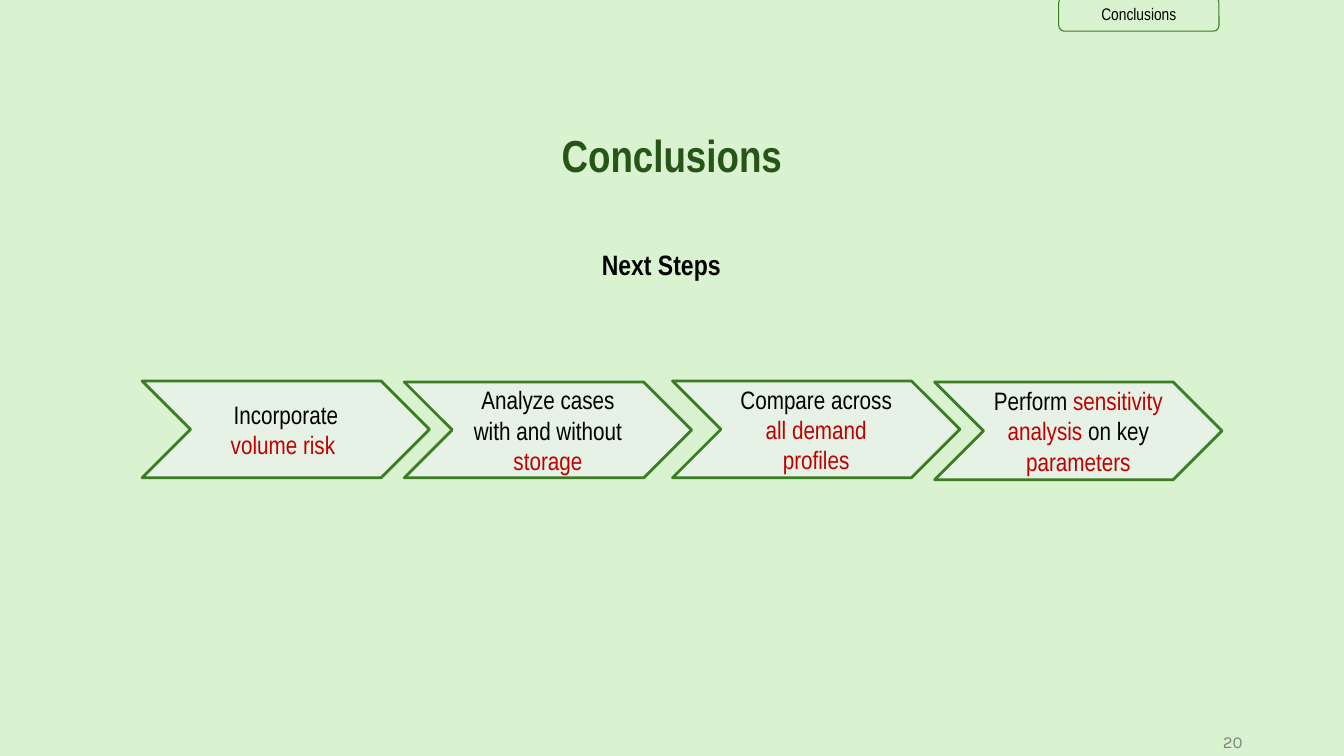
from dataclasses import dataclass

from pptx import Presentation
from pptx.dml.color import RGBColor
from pptx.enum.shapes import MSO_SHAPE
from pptx.enum.text import MSO_ANCHOR, PP_ALIGN
from pptx.util import Inches, Pt


@dataclass(frozen=True)
class Theme:
    background: str = "D9F2D0"
    step_fill: str = "E5F2E5"
    outline: str = "3B7D23"
    title: str = "275417"
    text: str = "000000"
    accent: str = "C00000"
    muted: str = "808080"
    font: str = "Arial Narrow"
    number_font: str = "Karla"
    title_size: int = 32
    heading_size: int = 20
    step_size: int = 18
    small_size: int = 12


theme = Theme()


def write(box, pieces, size, align=PP_ALIGN.CENTER, bold=False, font=theme.font):
    box.text_frame.word_wrap = True
    para = box.text_frame.paragraphs[0]
    para.alignment = align
    for text, color in pieces:
        span = para.add_run()
        span.text = text
        span.font.name = font
        span.font.size = Pt(size)
        span.font.bold = bold
        span.font.color.rgb = RGBColor.from_string(color)


def add_outlined(page, kind, place, line_width):
    shape = page.shapes.add_shape(kind, *map(Inches, place))
    shape.shadow.inherit = False
    shape.line.color.rgb = RGBColor.from_string(theme.outline)
    shape.line.width = Pt(line_width)
    shape.text_frame.vertical_anchor = MSO_ANCHOR.MIDDLE
    return shape


deck = Presentation()
deck.slide_width = Inches(13.33)
deck.slide_height = Inches(7.5)
page = deck.slides.add_slide(deck.slide_layouts[6])
page.background.fill.solid()
page.background.fill.fore_color.rgb = RGBColor.from_string(theme.background)

title = page.shapes.add_textbox(Inches(0), Inches(1.22), Inches(13.33), Inches(0.64))
write(title, [("Conclusions", theme.title)], theme.title_size, bold=True)

heading = page.shapes.add_textbox(Inches(5.87), Inches(2.41), Inches(1.58), Inches(0.44))
write(heading, [("Next Steps", theme.text)], theme.heading_size, PP_ALIGN.LEFT, bold=True)

steps = [
    (1.41, 3.78, 0.96, [("Incorporate ", theme.text), ("volume risk ", theme.accent)]),
    (4.01, 3.79, 0.95, [("Analyze cases with and without ", theme.text),
                        ("storage", theme.accent)]),
    (6.67, 3.78, 0.96, [("Compare across ", theme.text),
                        ("all demand profiles", theme.accent)]),
    (9.27, 3.79, 0.97, [("Perform ", theme.text), ("sensitivity analysis ", theme.accent),
                        ("on key ", theme.text), ("parameters", theme.accent)]),
]
for left, top, height, pieces in steps:
    step = add_outlined(page, MSO_SHAPE.CHEVRON, (left, top, 2.85, height), 2)
    step.fill.solid()
    step.fill.fore_color.rgb = RGBColor.from_string(theme.step_fill)
    write(step, pieces, theme.step_size)

tab = add_outlined(page, MSO_SHAPE.ROUNDED_RECTANGLE, (10.5, -0.03, 1.59, 0.34), 0.75)
tab.fill.background()
write(tab, [("Conclusions", theme.text)], theme.small_size)

number = page.shapes.add_textbox(Inches(12.03), Inches(7.21), Inches(0.45), Inches(0.41))
write(number, [("20", theme.muted)], theme.small_size, PP_ALIGN.LEFT, font=theme.number_font)

deck.save("out.pptx")
